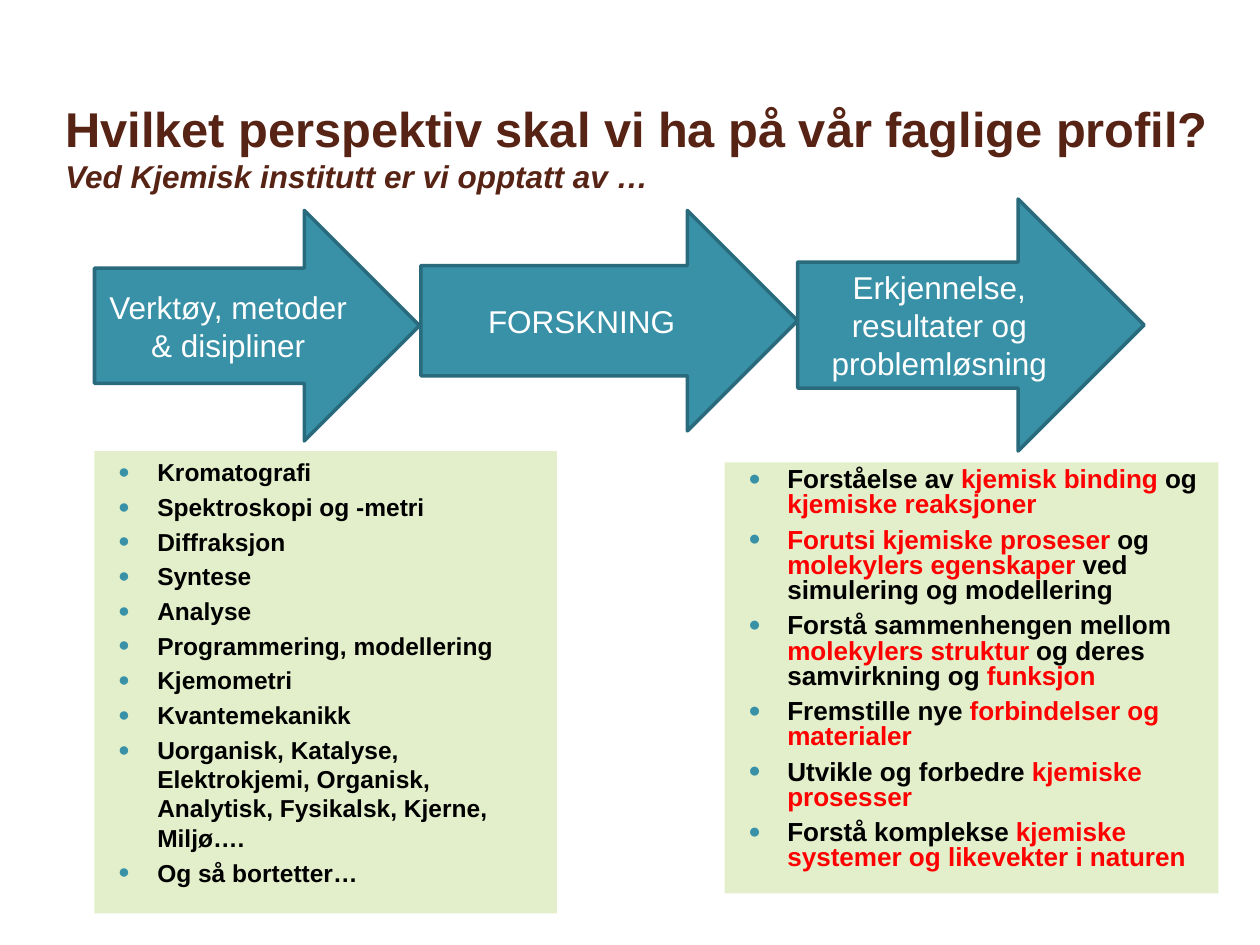
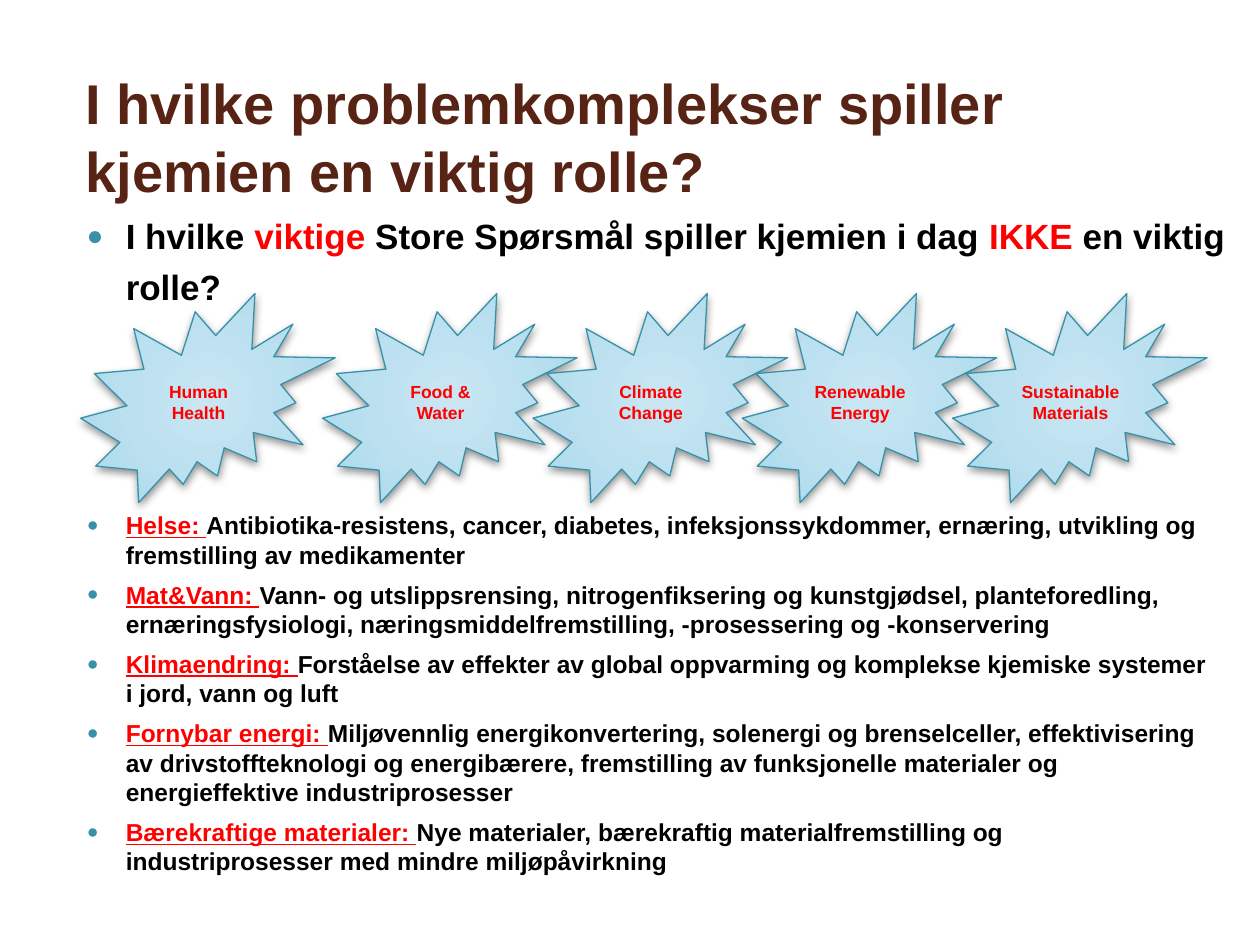
"""Build two slides on the research profile of a chemistry institute."""
from lxml.etree import SubElement
from pptx import Presentation
from pptx.dml.color import RGBColor
from pptx.enum.shapes import MSO_SHAPE
from pptx.enum.text import MSO_ANCHOR, PP_ALIGN
from pptx.oxml import parse_xml
from pptx.oxml.ns import nsdecls, qn
from pptx.util import Pt

PX = 9144
FONT = "Arial"
BROWN = RGBColor(0x57, 0x23, 0x14)
TEAL = RGBColor(0x38, 0x91, 0xA7)
DARK = RGBColor(0x29, 0x6B, 0x7C)
GREEN = RGBColor(0xD0, 0xE4, 0xA6)
RED = RGBColor(0xFF, 0, 0)
BLACK = RGBColor(0, 0, 0)
WHITE = RGBColor(0xFF, 0xFF, 0xFF)
GLOW = ((0, "C9E6F2"), (50, "BBE0EF"), (97, "A4D8ED"), (100, "9BD7EE"))

ARROWS = (
    ((75, 167, 258, 183), "Verktøy, metoder & disipliner"),
    ((334, 167, 299, 175), "FORSKNING"),
    ((633, 158, 275, 200), "Erkjennelse, resultater og problemløsning"),
)
TOOLS = (
    "Kromatografi", "Spektroskopi og -metri", "Diffraksjon", "Syntese", "Analyse",
    "Programmering, modellering", "Kjemometri", "Kvantemekanikk",
    "Uorganisk, Katalyse, Elektrokjemi, Organisk, Analytisk, Fysikalsk, Kjerne, Miljø….",
    "Og så bortetter…",
)
GOALS = (
    "Forståelse av *kjemisk binding *og *kjemiske reaksjoner",
    "*Forutsi kjemiske proseser *og* molekylers egenskaper *ved simulering og modellering",
    "Forstå sammenhengen mellom *molekylers struktur *og deres samvirkning og *funksjon",
    "Fremstille nye *forbindelser og materialer",
    "Utvikle og forbedre *kjemiske prosesser",
    "Forstå komplekse *kjemiske systemer og likevekter i naturen",
)
QUERY = ("I hvilke *viktige* Store Spørsmål spiller kjemien i dag *IKKE* en viktig rolle?",)
SEALS = ("Human\nHealth", "Food &\nWater", "Climate\nChange",
         "Renewable\nEnergy", "Sustainable\nMaterials")
TOPICS = (
    "*Helse: *Antibiotika-resistens, cancer, diabetes, infeksjonssykdommer, ernæring, "
    "utvikling og fremstilling av medikamenter",
    "*Mat&Vann: *Vann- og utslippsrensing, nitrogenfiksering og kunstgjødsel, planteforedling, "
    "ernæringsfysiologi, næringsmiddelfremstilling, -prosessering og -konservering",
    "*Klimaendring: *Forståelse av effekter av global oppvarming og komplekse kjemiske "
    "systemer i jord, vann og luft",
    "*Fornybar energi: *Miljøvennlig energikonvertering, solenergi og brenselceller, "
    "effektivisering av drivstoffteknologi og energibærere, fremstilling av funksjonelle "
    "materialer og energieffektive industriprosesser",
    "*Bærekraftige materialer: *Nye materialer, bærekraftig materialfremstilling og "
    "industriprosesser med mindre miljøpåvirkning",
)


def scale(box):
    """Turn a px box into EMU lengths."""
    return [n * PX for n in box]


def style(para, size, color, bold=True, italic=None):
    """Set the font of a whole paragraph."""
    font = para.font
    font.name, font.size, font.bold, font.italic = FONT, Pt(size), bold, italic
    font.color.rgb = color


def textbox(slide, box):
    """Add a wrapping text box."""
    shape = slide.shapes.add_textbox(*scale(box))
    shape.text_frame.word_wrap = True
    return shape


def title(slide, box, *lines):
    """Add a brown title; each line is text, size and italic."""
    frame = textbox(slide, box).text_frame
    frame.vertical_anchor = MSO_ANCHOR.MIDDLE
    for i, (text, size, italic) in enumerate(lines):
        para = frame.add_paragraph() if i else frame.paragraphs[0]
        para.text = text
        style(para, size, BROWN, italic=italic)


def bullet(para):
    """Give a paragraph a hanging teal dot."""
    props = para._p.get_or_add_pPr()
    props.set("marL", str(40 * PX))
    props.set("indent", str(-31 * PX))
    SubElement(SubElement(props, qn("a:buClr")), qn("a:srgbClr"), val=str(TEAL))
    SubElement(props, qn("a:buSzPct"), val="80000")
    SubElement(props, qn("a:buFont"), typeface=FONT)
    SubElement(props, qn("a:buChar"), char="●")


def bullets(slide, box, items, size, before=0, after=0, lead=None, under=None):
    """Add a bulleted list where parts between stars turn red."""
    shape = textbox(slide, box)
    frame = shape.text_frame
    for i, item in enumerate(items):
        para = frame.add_paragraph() if i else frame.paragraphs[0]
        bullet(para)
        para.space_before = Pt(before if i else 0)
        para.space_after = Pt(after)
        para.line_spacing = lead
        style(para, size, BLACK)
        for j, part in enumerate(item.split("*")):
            if part:
                run = para.add_run()
                run.text = part
                if j % 2:
                    run.font.color.rgb = RED
                    run.font.underline = under
    return shape


def tint(shape):
    """Fill a panel with see-through green."""
    shape.fill.solid()
    shape.fill.fore_color.rgb = GREEN
    color = shape._element.spPr.find(".//" + qn("a:srgbClr"))
    SubElement(color, qn("a:alpha"), val="58000")


def label(slide, kind, box, text, size, color, bold, edge, width):
    """Add a preset shape with centred text."""
    shape = slide.shapes.add_shape(kind, *scale(box))
    shape.shadow.inherit = False
    shape.line.color.rgb = edge
    shape.line.width = Pt(width)
    frame = shape.text_frame
    frame.text = text
    for para in frame.paragraphs:
        para.alignment = PP_ALIGN.CENTER
        style(para, size, color, bold)
    return shape


def arrow(slide, box, text):
    """Add a teal block arrow."""
    shape = label(slide, MSO_SHAPE.RIGHT_ARROW, box, text, 18, WHITE, False, DARK, 2)
    shape.fill.solid()
    shape.fill.fore_color.rgb = TEAL


def seal(slide, left, text):
    """Add a pale blue starburst with a soft shadow."""
    shape = label(slide, MSO_SHAPE.EXPLOSION2, (left, 233, 202, 166), text,
                  10, RED, True, TEAL, 0.75)
    frame = shape.text_frame
    frame.margin_left = frame.margin_right = frame.margin_top = frame.margin_bottom = 0
    stops = "".join(f'<a:gs pos="{pos * 1000}"><a:srgbClr val="{color}"/></a:gs>'
                    for pos, color in GLOW)
    props = shape._element.spPr
    props.find(qn("a:prstGeom")).addnext(parse_xml(
        f'<a:gradFill {nsdecls("a")}><a:gsLst>{stops}</a:gsLst><a:path path="circle">'
        '<a:fillToRect l="50000" t="50000" r="50000" b="50000"/></a:path></a:gradFill>'))
    props.find(qn("a:effectLst")).append(parse_xml(
        f'<a:outerShdw {nsdecls("a")} blurRad="{Pt(5)}" dist="{Pt(2)}" dir="5400000" '
        'rotWithShape="0"><a:srgbClr val="000000"><a:alpha val="43000"/></a:srgbClr>'
        '</a:outerShdw>'))


def profile(slide):
    """Fill the slide on the path from tools to insight."""
    title(slide, (42, 50, 942, 133),
          ("Hvilket perspektiv skal vi ha på vår faglige profil?", 27.9, None),
          ("Ved Kjemisk institutt er vi opptatt av …", 18, True))
    for box, text in ARROWS:
        arrow(slide, box, text)
    tint(bullets(slide, (75, 358, 367, 367), TOOLS, 14, after=3))
    tint(bullets(slide, (575, 367, 392, 342), GOALS, 14.9, before=6, lead=0.8))


def issues(slide):
    """Fill the slide on the big questions."""
    title(slide, (58, 33, 820, 150),
          ("I hvilke problemkomplekser spiller kjemien en viktig rolle?", 32, None))
    bullets(slide, (50, 159, 950, 80), QUERY, 20, lead=1.2)
    for i, text in enumerate(SEALS):
        seal(slide, round(256 + (i - 1) * 500 / 3) if i else 64, text)
    bullets(slide, (50, 400, 925, 325), TOPICS, 14, before=6, under=True)


def main():
    """Build and save the deck."""
    deck = Presentation()
    deck.slide_width, deck.slide_height = scale((1000, 750))
    for fill in (profile, issues):
        fill(deck.slides.add_slide(deck.slide_layouts[6]))
    deck.save("out.pptx")


if __name__ == "__main__":
    main()
